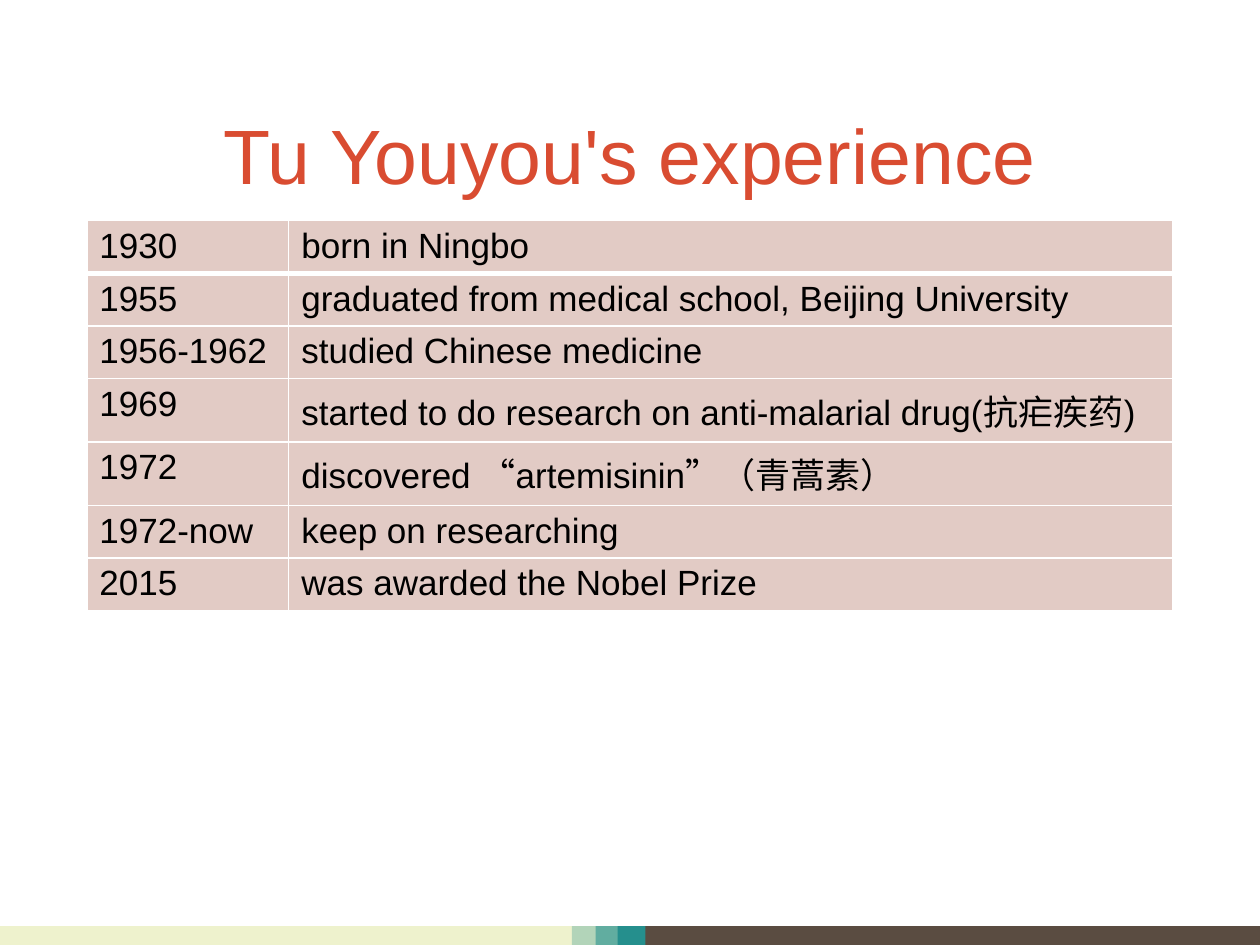
from lxml.etree import SubElement
from pptx import Presentation
from pptx.dml.color import RGBColor
from pptx.enum.shapes import MSO_SHAPE as Shape
from pptx.enum.text import MSO_ANCHOR as Anchor, PP_ALIGN as Align
from pptx.oxml.ns import qn
from pptx.util import Cm, Pt

WHITE = RGBColor(0xFF, 0xFF, 0xFF)
BLACK = RGBColor(0x00, 0x00, 0x00)
RED = RGBColor(0xD9, 0x4C, 0x31)
PINK = RGBColor(0xE2, 0xCB, 0xC5)
CREAM = RGBColor(0xEE, 0xF2, 0xCD)
BROWN = RGBColor(0x5A, 0x4C, 0x41)
MINT = RGBColor(0xB2, 0xD4, 0xB9)
SEA = RGBColor(0x61, 0xAD, 0xA0)
TEAL = RGBColor(0x25, 0x8F, 0x8D)

# Footer stripes from back to front: left, width, colour
STRIPES = [
    (0, 11.68, CREAM),
    (12.98, 12.42, BROWN),
    (11.53, 0.79, MINT),
    (12.01, 0.66, SEA),
    (12.45, 0.56, TEAL),
]

EXPERIENCE = [
    ("1930", "born in Ningbo"),
    ("1955", "graduated from medical school, Beijing University"),
    ("1956-1962", "studied Chinese medicine"),
    ("1969", "started to do research on anti-malarial drug(抗疟疾药)"),
    ("1972", "discovered “artemisinin”（青蒿素）"),
    ("1972-now", "keep on researching"),
    ("2015", "was awarded the Nobel Prize"),
]


class SlideBuilder:
    title_format = {"name": "Arial", "size": Pt(44), "bold": False}
    cell_format = {"name": "Arial", "size": Pt(20), "bold": False}

    def __init__(self, slide):
        self.slide = slide

    def format_font(self, font, values, color):
        for attribute, value in values.items():
            setattr(font, attribute, value)
        font.color.rgb = color

    def stripe(self, left, width, color):
        shape = self.slide.shapes.add_shape(
            Shape.RECTANGLE, Cm(left), Cm(18.67), Cm(width), Cm(0.4))
        shape.shadow.inherit = False
        shape.fill.solid()
        shape.fill.fore_color.rgb = color
        shape.line.fill.background()

    def title(self, text, left, top, width, height):
        shape = self.slide.shapes.title
        place = {"left": left, "top": top, "width": width, "height": height}
        for attribute, value in place.items():
            setattr(shape, attribute, Cm(value))
        frame = shape.text_frame
        frame.text = text
        frame.vertical_anchor = Anchor.MIDDLE
        paragraph = frame.paragraphs[0]
        paragraph.alignment = Align.CENTER
        self.format_font(paragraph.runs[0].font, self.title_format, RED)

    def border(self, cell, side, points):
        properties = cell._tc.get_or_add_tcPr()
        line = SubElement(properties, qn(f"a:ln{side}"), w=str(Pt(points)))
        fill = SubElement(line, qn("a:solidFill"))
        SubElement(fill, qn("a:srgbClr"), val=str(WHITE))

    def table(self, rows, left, top, column_widths, row_height):
        frame = self.slide.shapes.add_table(
            len(rows), len(column_widths), Cm(left), Cm(top),
            Cm(sum(column_widths)), Cm(row_height * len(rows)))
        table = frame.table
        table.first_row = table.horz_banding = False
        for column, width in zip(table.columns, column_widths):
            column.width = Cm(width)
        for row_index, texts in enumerate(rows):
            # The line below the first row is thicker
            weights = {"L": 1, "R": 1,
                       "T": 3 if row_index == 1 else 1,
                       "B": 3 if row_index == 0 else 1}
            for column_index, text in enumerate(texts):
                cell = table.cell(row_index, column_index)
                cell.text = text
                for side, points in weights.items():
                    self.border(cell, side, points)
                cell.fill.solid()
                cell.fill.fore_color.rgb = PINK
                run = cell.text_frame.paragraphs[0].runs[0]
                self.format_font(run.font, self.cell_format, BLACK)


def main():
    presentation = Presentation()
    presentation.slide_width = Cm(25.4)
    presentation.slide_height = Cm(19.05)
    title_only = presentation.slide_layouts[5]
    builder = SlideBuilder(presentation.slides.add_slide(title_only))

    # Footer band
    for left, width, color in STRIPES:
        builder.stripe(left, width, color)

    # Heading and timeline
    builder.title("Tu Youyou's experience", 1.75, 1.75, 21.9, 2.7)
    builder.table(EXPERIENCE, 1.75, 4.45, [4.07, 17.83], 1.06)

    presentation.save("out.pptx")


if __name__ == "__main__":
    main()
